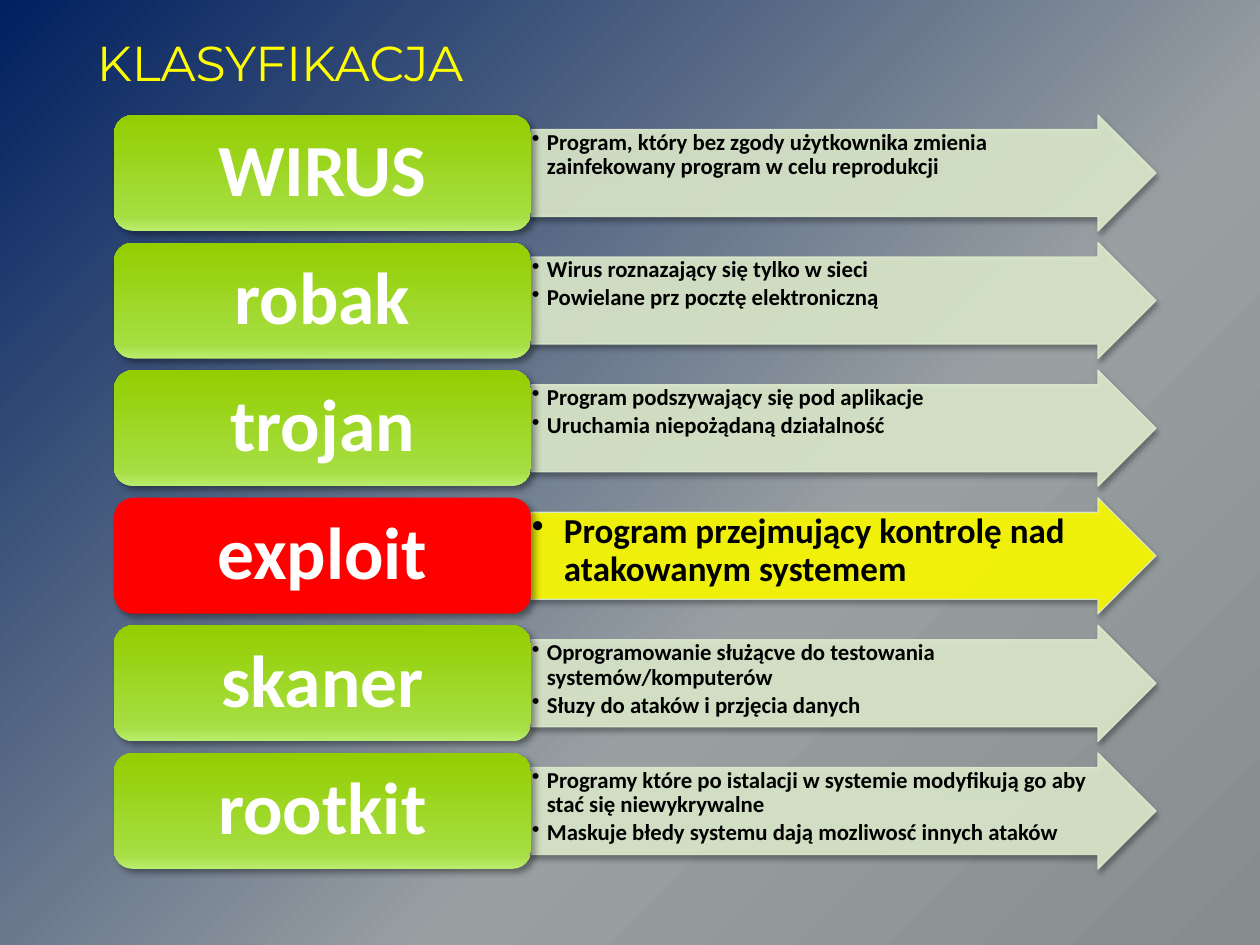
from lxml import etree
from pptx import Presentation
from pptx.dml.color import RGBColor
from pptx.enum.shapes import MSO_SHAPE
from pptx.enum.text import MSO_ANCHOR, PP_ALIGN
from pptx.oxml.ns import qn
from pptx.util import Pt

ARROW, LABEL = MSO_SHAPE.RIGHT_ARROW, MSO_SHAPE.ROUNDED_RECTANGLE
TOP, MIDDLE = MSO_ANCHOR.TOP, MSO_ANCHOR.MIDDLE
LEFT, CENTER = PP_ALIGN.LEFT, PP_ALIGN.CENTER

TITLE = "KLASYFIKACJA"
THREATS = [
    ("WIRUS", ["Program, który bez zgody użytkownika zmienia zainfekowany program w celu reprodukcji"]),
    ("robak", ["Wirus roznazający się tylko w sieci", "Powielane prz pocztę elektroniczną"]),
    ("trojan", ["Program podszywający się pod aplikacje", "Uruchamia niepożądaną działalność"]),
    ("exploit", ["Program przejmujący kontrolę nad atakowanym systemem"]),
    ("skaner", ["Oprogramowanie służącve do testowania systemów/komputerów",
                "Słuzy do ataków i przjęcia danych"]),
    ("rootkit", ["Programy które po istalacji w systemie modyfikują go aby stać się niewykrywalne",
                 "Maskuje błedy systemu dają mozliwosć innych ataków"]),
]
HIGHLIGHTED = "exploit"

COLORS = {"title": "FFFF00", "label text": "FFFFFF", "text": "000000", "shadow": "000000",
          "arrow": "DDEBCD", "hot arrow": "FFFF00", "hot label": "FF0000"}
BACKGROUND = [(0, "002060"), (62, "99A0A2"), (100, "868D8F")]
GREEN = [(0, "BAED6F"), (12, "A6DE43"), (100, "93CE00")]

TITLE_FONT = {"name": "Montserrat", "size": Pt(28), "bold": False}
LABEL_FONT = {"name": "Calibri", "size": Pt(42), "bold": True}
NOTE_FONT = {"name": "Calibri", "size": Pt(13), "bold": True}
HOT_NOTE_FONT = {**NOTE_FONT, "size": Pt(20)}
LABEL_SHADOW = {"alpha": 40, "blur": 4, "distance": 3, "angle": 45}
ARROW_SHADOW = {"alpha": 35, "blur": 3.1, "distance": 1.8, "angle": 90}

PX = 914400 / 126
FIRST_TOP, LAST_TOP, ROW_HEIGHT = 115, 753, 116
LABEL_LEFT, LABEL_WIDTH = 114, 417
ARROW_LEFT, ARROW_WIDTH = LABEL_LEFT + LABEL_WIDTH, 625


def px(length):
    return round(length * PX)


def add(parent, tag, **attributes):
    child = etree.SubElement(parent, qn(tag))
    for name, value in attributes.items():
        child.set(name, str(value))
    return child


def fill_gradient(fill, owner, stops, angle):
    """Fill with any number of stops; the angle runs clockwise."""
    fill.gradient()
    fill.gradient_angle = -angle % 360
    stop_list = owner.xpath(".//a:gsLst")[0]
    for stop in list(stop_list):
        stop_list.remove(stop)
    for position, color in stops:
        add(add(stop_list, "a:gs", pos=position * 1000), "a:srgbClr", val=color)


def fill_solid(fill, color):
    fill.solid()
    fill.fore_color.rgb = RGBColor.from_string(color)


def add_shadow(shape, alpha, blur, distance, angle):
    shape.shadow.inherit = False
    effects = shape.element.spPr.find(qn("a:effectLst"))
    shadow = add(effects, "a:outerShdw", blurRad=Pt(blur), dist=Pt(distance),
                 dir=angle * 60000, rotWithShape=0)
    add(add(shadow, "a:srgbClr", val=COLORS["shadow"]), "a:alpha", val=alpha * 1000)


def add_block(page, kind, left, top, width):
    return page.shapes.add_shape(kind, px(left), px(top), px(width), px(ROW_HEIGHT))


def write(shape, lines, font, color, align, anchor, insets, space=0, indent=0):
    """Fill the frame with one paragraph a line, bulleted when indented."""
    frame = shape.text_frame
    frame.word_wrap = True
    frame.vertical_anchor = anchor
    for side, inset in zip(("left", "top", "right", "bottom"), insets):
        setattr(frame, f"margin_{side}", px(inset))
    for number, line in enumerate(lines):
        paragraph = frame.add_paragraph() if number else frame.paragraphs[0]
        paragraph.text = line
        paragraph.alignment = align
        paragraph.line_spacing = 0.9 if indent or anchor == MIDDLE else 1.0
        paragraph.space_after = Pt(space)
        if indent:
            properties = paragraph._p.get_or_add_pPr()
            properties.set("marL", str(px(indent)))
            properties.set("indent", str(-px(indent)))
            add(properties, "a:buChar", char="•")
        for name, value in font.items():
            setattr(paragraph.font, name, value)
        paragraph.font.color.rgb = RGBColor.from_string(color)


def add_arrow(page, top, notes, hot):
    arrow = add_block(page, ARROW, ARROW_LEFT, top, ARROW_WIDTH)
    arrow.adjustments[0] = 0.75
    arrow.adjustments[1] = 0.5
    fill_solid(arrow.fill, COLORS["hot arrow" if hot else "arrow"])
    fill_solid(arrow.line.fill, COLORS["arrow"])
    arrow.line.width = Pt(0.75)
    for color in arrow.element.spPr.xpath(".//a:srgbClr"):
        add(color, "a:alpha", val=90000)
    add_shadow(arrow, **ARROW_SHADOW)
    write(arrow, notes, HOT_NOTE_FONT if hot else NOTE_FONT, COLORS["text"], LEFT, TOP,
          (1, 1, 1, 1), space=2, indent=32 if hot else 15)


def add_label(page, top, name, hot):
    label = add_block(page, LABEL, LABEL_LEFT, top, LABEL_WIDTH)
    if hot:
        fill_solid(label.fill, COLORS["hot label"])
    else:
        fill_gradient(label.fill, label.element.spPr, GREEN, 270)
    label.line.fill.background()
    add_shadow(label, **LABEL_SHADOW)
    write(label, [name], LABEL_FONT, COLORS["label text"], CENTER, MIDDLE, (21, 11, 21, 11))


def main():
    deck = Presentation()
    deck.slide_width, deck.slide_height = px(1260), px(945)
    page = deck.slides.add_slide(deck.slide_layouts[5])
    fill_gradient(page.background.fill, page.element, BACKGROUND, 45)

    title = page.shapes.title
    title.left, title.top, title.width, title.height = map(px, (84, 26, 470, 72))
    write(title, [TITLE], TITLE_FONT, COLORS["title"], LEFT, TOP, (13, 6, 13, 6))

    pitch = (LAST_TOP - FIRST_TOP) / (len(THREATS) - 1)
    for row, (name, notes) in enumerate(THREATS):
        top = FIRST_TOP + row * pitch
        hot = name == HIGHLIGHTED
        add_arrow(page, top, notes, hot)
        add_label(page, top, name, hot)
    deck.save("out.pptx")


if __name__ == "__main__":
    main()
